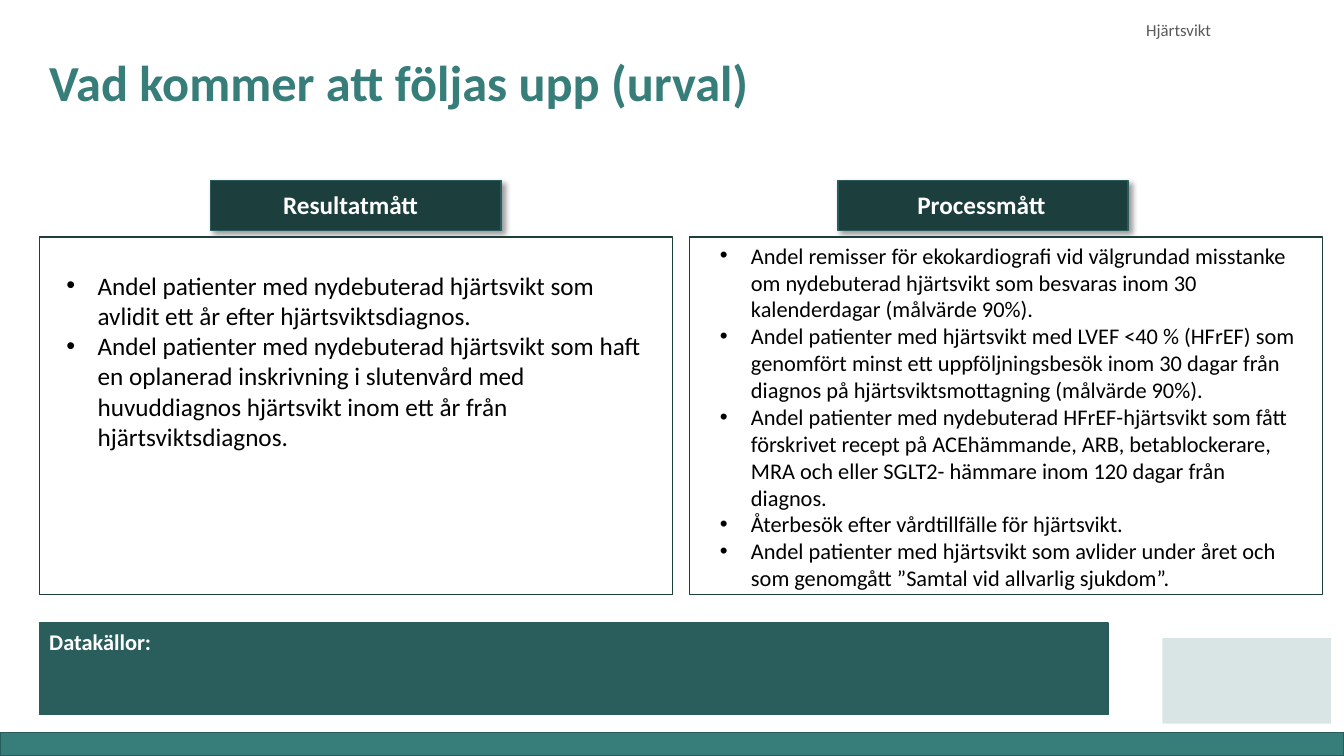
from lxml.etree import SubElement
from pptx import Presentation
from pptx.dml.color import RGBColor as Rgb
from pptx.enum.shapes import MSO_SHAPE as Shape
from pptx.enum.text import MSO_ANCHOR as Anchor, PP_ALIGN as Align
from pptx.oxml.ns import qn
from pptx.util import Emu, Inches, Pt

COLORS = {
    "teal": "377D7A", "edge": "295C5A", "dark": "1C3E3D", "source": "295E5C",
    "white": "FFFFFF", "black": "000000", "grey": "595959", "mark": "D9E5E4",
}
WIDTH, HEIGHT = 13.33, 7.5
MARGIN = 0.39
PANEL_WIDTH, PANEL_GAP = 6.28, 0.17
PANEL_TOP, PANEL_HEIGHT = 2.35, 3.55

# Heading, label offset in the tab, tab offset, list offset, text size, measures
PANELS = [
    ("Resultatmått", 0.62, 1.7, (0.17, 0.28), 18, [
        "Andel patienter med nydebuterad hjärtsvikt som avlidit ett år efter "
        "hjärtsviktsdiagnos.",
        "Andel patienter med nydebuterad hjärtsvikt som haft en oplanerad inskrivning "
        "i slutenvård med huvuddiagnos hjärtsvikt inom ett år från hjärtsviktsdiagnos.",
    ]),
    ("Processmått", 0.69, 1.47, (0.2, 0), 16, [
        "Andel remisser för ekokardiografi vid välgrundad misstanke om nydebuterad "
        "hjärtsvikt som besvaras inom 30 kalenderdagar (målvärde 90%).",
        "Andel patienter med hjärtsvikt med LVEF <40 % (HFrEF) som genomfört minst ett "
        "uppföljningsbesök inom 30 dagar från diagnos på hjärtsviktsmottagning "
        "(målvärde 90%).",
        "Andel patienter med nydebuterad HFrEF-hjärtsvikt som fått förskrivet recept på "
        "ACEhämmande, ARB, betablockerare, MRA och eller SGLT2- hämmare inom 120 dagar "
        "från diagnos.",
        "Återbesök efter vårdtillfälle för hjärtsvikt.",
        "Andel patienter med hjärtsvikt som avlider under året och som genomgått "
        "”Samtal vid allvarlig sjukdom”.",
    ]),
]


def add_rect(page, box, fill, edge=None):
    rect = page.shapes.add_shape(Shape.RECTANGLE, *map(Inches, box))
    rect.shadow.inherit = False
    rect.fill.solid()
    rect.fill.fore_color.rgb = Rgb.from_string(COLORS[fill])
    if edge:
        rect.line.color.rgb = Rgb.from_string(COLORS[edge])
        rect.line.width = Pt(1)
    else:
        rect.line.fill.background()
    return rect


def add_shadow(rect):
    effects = rect._element.spPr.find(qn("a:effectLst"))
    shadow = SubElement(effects, qn("a:outerShdw"), blurRad=str(Pt(4)), dist=str(Pt(3)),
                        dir="2700000", algn="tl", rotWithShape="0")
    color = SubElement(shadow, qn("a:srgbClr"), val=COLORS["black"])
    SubElement(color, qn("a:alpha"), val="40000")


def add_bullet(para):
    props = para._p.get_or_add_pPr()
    props.set("marL", str(Inches(0.31)))
    props.set("indent", str(-Inches(0.31)))
    SubElement(props, qn("a:buFont"), typeface="Arial")
    SubElement(props, qn("a:buChar"), char="•")


def write(shape, lines, size, color, bold=False, bullets=False, anchor=Anchor.TOP, spacing=None):
    frame = shape.text_frame
    frame.word_wrap = True
    frame.vertical_anchor = anchor
    for index, line in enumerate(lines):
        para = frame.add_paragraph() if index else frame.paragraphs[0]
        para.alignment = Align.LEFT
        if spacing:
            para.line_spacing = spacing
        if bullets:
            add_bullet(para)
        span = para.add_run()
        span.text = line
        font_format = {"name": "Calibri", "size": Pt(size), "bold": bold}
        for name, value in font_format.items():
            setattr(span.font, name, value)
        span.font.color.rgb = Rgb.from_string(COLORS[color])


def add_text(page, box, lines, size, color, **options):
    write(page.shapes.add_textbox(*map(Inches, box)), lines, size, color, **options)


def add_header(page, box):
    left, top, width, height = box
    add_text(page, (left, top + 0.49, 10, 0.67), ["Vad kommer att följas upp (urval)"],
             36, "teal", bold=True, anchor=Anchor.BOTTOM, spacing=0.9)
    add_text(page, (left + width - 1.67, top + 0.15, 1.7, 0.3), ["Hjärtsvikt"], 12, "grey")


def add_panel(page, box, heading, label_left, tab_left, list_offset, size, measures):
    left, top, width, height = box
    # Heading tab above the frame
    tab = left + tab_left, top - 0.56, 2.88, 0.5
    add_shadow(add_rect(page, tab, "dark", "edge"))
    add_text(page, (tab[0] + label_left, tab[1] + 0.04, 1.79, 0.4), [heading],
             18, "white", bold=True)
    # Framed list of measures
    add_rect(page, box, "white", "dark")
    dx, dy = list_offset
    add_text(page, (left + dx, top + dy, 5.92, height - dy), measures,
             size, "black", bullets=True)


def add_footer(page, box):
    left, top, width, height = box
    # Data sources
    sources = add_rect(page, (left + MARGIN, top, 10.6, 0.91), "source", "edge")
    write(sources, ["Datakällor:"], 16, "white", bold=True)
    # Plain sender mark
    add_rect(page, (left + 11.53, top + 0.15, 1.67, 0.85), "mark")
    # Bottom band
    add_rect(page, (left, top + height - 0.23, width, 0.23), "teal", "edge")


def main():
    deck = Presentation()
    deck.slide_width, deck.slide_height = Emu(Inches(WIDTH)), Emu(Inches(HEIGHT))
    page = deck.slides.add_slide(deck.slide_layouts[6])
    add_header(page, (MARGIN, 0, WIDTH - 2 * MARGIN, 1.16))
    for column, panel in enumerate(PANELS):
        left = MARGIN + column * (PANEL_WIDTH + PANEL_GAP)
        add_panel(page, (left, PANEL_TOP, PANEL_WIDTH, PANEL_HEIGHT), *panel)
    add_footer(page, (0, 6.18, WIDTH, HEIGHT - 6.18))
    deck.save("out.pptx")


if __name__ == "__main__":
    main()
